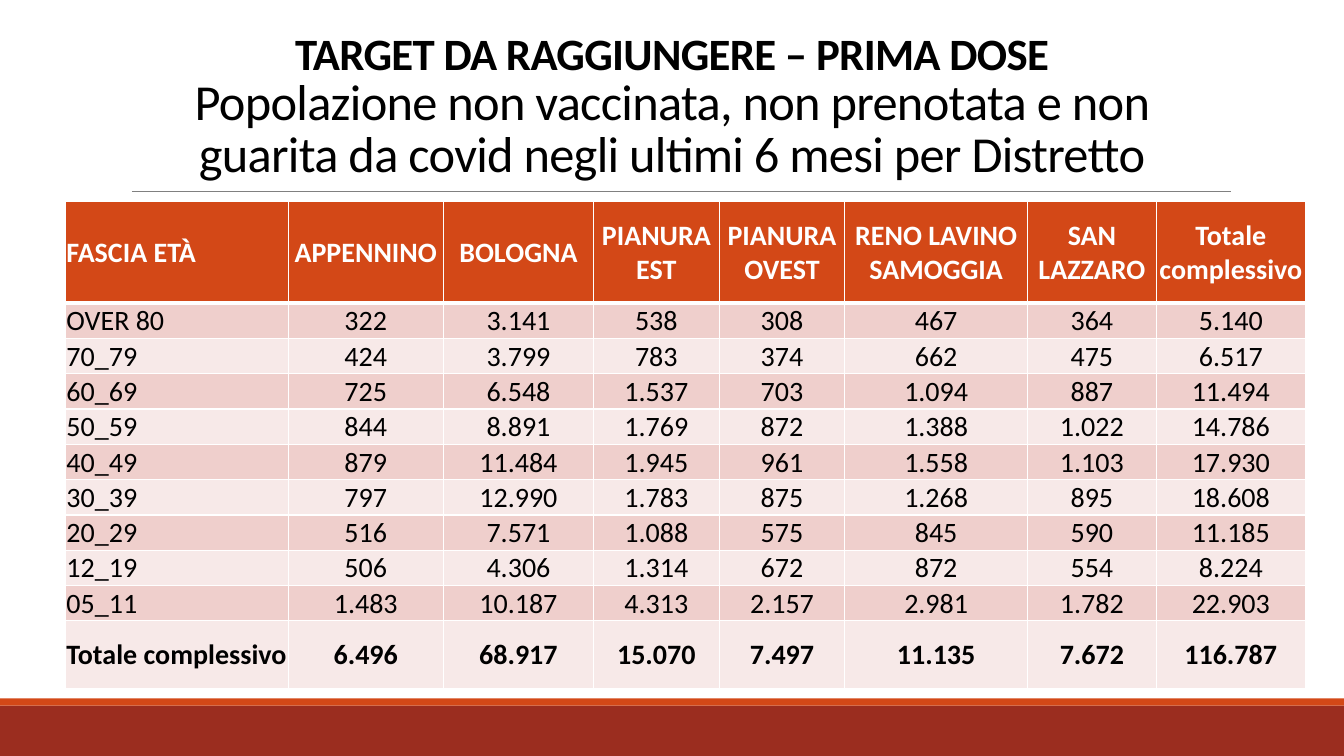
"""Builds the slide on first-dose vaccination targets by district."""
from dataclasses import dataclass

import lxml.etree
import pptx
import pptx.dml.color
import pptx.enum.shapes
import pptx.enum.text
import pptx.oxml.ns
import pptx.slide
import pptx.table
import pptx.text.text
import pptx.util

Pt = pptx.util.Pt
ALIGN = pptx.enum.text.PP_ALIGN
ANCHOR = pptx.enum.text.MSO_ANCHOR


@dataclass(frozen=True)
class Theme:
    font: str = "Calibri"
    heading_size: float = 32
    subtitle_size: float = 36
    cell_size: float = 20
    ink: str = "000000"
    white: str = "FFFFFF"
    accent: str = "D34817"
    footer: str = "9B2D1F"
    rule: str = "808080"
    bands: tuple[str, str] = ("EFCFCC", "F7E9E8")


@dataclass(frozen=True)
class Bar:
    top: float
    height: float
    color: str


@dataclass(frozen=True)
class Row:
    texts: tuple[str, ...]
    height: float
    fill: str
    color: str
    bold: bool
    label_anchor: ANCHOR
    top_border: float = 1
    bottom_border: float = 1


THEME = Theme()
WIDTH, HEIGHT = 960, 540
BARS = (Bar(504, 36, THEME.footer), Bar(498.8, 5.2, THEME.accent))
COLUMNS = (159, 111, 107.2, 89.8, 89.8, 130.5, 92, 106.5)
HEADER = ("FASCIA ETÀ", "APPENNINO", "BOLOGNA", "PIANURA EST", "PIANURA OVEST",
          "RENO LAVINO SAMOGGIA", "SAN LAZZARO", "Totale complessivo")
AGES = (
    ("OVER 80", "322", "3.141", "538", "308", "467", "364", "5.140"),
    ("70_79", "424", "3.799", "783", "374", "662", "475", "6.517"),
    ("60_69", "725", "6.548", "1.537", "703", "1.094", "887", "11.494"),
    ("50_59", "844", "8.891", "1.769", "872", "1.388", "1.022", "14.786"),
    ("40_49", "879", "11.484", "1.945", "961", "1.558", "1.103", "17.930"),
    ("30_39", "797", "12.990", "1.783", "875", "1.268", "895", "18.608"),
    ("20_29", "516", "7.571", "1.088", "575", "845", "590", "11.185"),
    ("12_19", "506", "4.306", "1.314", "672", "872", "554", "8.224"),
    ("05_11", "1.483", "10.187", "4.313", "2.157", "2.981", "1.782", "22.903"),
)
TOTALS = ("Totale complessivo", "6.496", "68.917", "15.070", "7.497",
          "11.135", "7.672", "116.787")


def rgb(color: str) -> pptx.dml.color.RGBColor:
    return pptx.dml.color.RGBColor.from_string(color)


def add_run(p: pptx.text.text._Paragraph, text: str, size: float,
            color: str, bold: bool) -> pptx.text.text._Run:
    r = p.add_run()
    r.text = text
    r.font.name = THEME.font
    r.font.size = Pt(size)
    r.font.bold = bold
    r.font.color.rgb = rgb(color)
    return r


def add_bar(s: pptx.slide.Slide, bar: Bar) -> None:
    sp = s.shapes.add_shape(pptx.enum.shapes.MSO_SHAPE.RECTANGLE,
                            0, Pt(bar.top), Pt(WIDTH), Pt(bar.height))
    sp.shadow.inherit = False
    sp.fill.solid()
    sp.fill.fore_color.rgb = rgb(bar.color)
    sp.line.fill.background()


def add_rule(s: pptx.slide.Slide) -> None:
    sp = s.shapes.add_connector(pptx.enum.shapes.MSO_CONNECTOR.STRAIGHT,
                                Pt(94.3), Pt(136.8), Pt(879), Pt(136.8))
    sp.line.color.rgb = rgb(THEME.rule)
    sp.line.width = Pt(0.5)
    lxml.etree.SubElement(sp._element.spPr, pptx.oxml.ns.qn("a:effectLst"))


def add_title(s: pptx.slide.Slide) -> None:
    sp = s.shapes.add_textbox(Pt(84), Pt(19.4), Pt(792), Pt(114.5))
    tf = sp.text_frame
    tf.word_wrap = True
    tf.vertical_anchor = ANCHOR.BOTTOM
    p = tf.paragraphs[0]
    p.alignment = ALIGN.CENTER
    p.line_spacing = 0.85
    heading = add_run(p, "TARGET DA RAGGIUNGERE – PRIMA DOSE",
                      THEME.heading_size, THEME.ink, True)
    p.add_line_break()
    subtitle = add_run(p, "Popolazione non vaccinata, non prenotata e non guarita "
                       "da covid negli ultimi 6 mesi per Distretto",
                       THEME.subtitle_size, THEME.ink, False)
    for r in (heading, subtitle):
        r._r.get_or_add_rPr().set("spc", "-50")


def set_border(cell: pptx.table._Cell, side: str, width: float) -> None:
    qn = pptx.oxml.ns.qn
    ln = lxml.etree.SubElement(cell._tc.get_or_add_tcPr(), qn(f"a:ln{side}"),
                               w=str(Pt(width)))
    fill = lxml.etree.SubElement(ln, qn("a:solidFill"))
    lxml.etree.SubElement(fill, qn("a:srgbClr"), val=THEME.white)


def fill_cell(cell: pptx.table._Cell, text: str, row: Row, is_label: bool) -> None:
    cell.margin_left = cell.margin_right = cell.margin_top = Pt(0.7)
    cell.margin_bottom = 0
    cell.vertical_anchor = row.label_anchor if is_label else ANCHOR.MIDDLE
    for side, width in (("L", 1), ("R", 1), ("T", row.top_border),
                        ("B", row.bottom_border)):
        set_border(cell, side, width)
    cell.fill.solid()
    cell.fill.fore_color.rgb = rgb(row.fill)
    p = cell.text_frame.paragraphs[0]
    p.alignment = ALIGN.LEFT if is_label else ALIGN.CENTER
    add_run(p, text, THEME.cell_size, row.color, row.bold)


def table_rows() -> list[Row]:
    header = Row(HEADER, 73, THEME.accent, THEME.white, True, ANCHOR.MIDDLE,
                 bottom_border=3)
    ages = [Row(texts, 25.2, THEME.bands[i % 2], THEME.ink, False, ANCHOR.BOTTOM,
                top_border=1 if i else 3) for i, texts in enumerate(AGES)]
    totals = Row(TOTALS, 48.6, THEME.bands[1], THEME.ink, True, ANCHOR.MIDDLE)
    return [header, *ages, totals]


def add_targets(s: pptx.slide.Slide, rows: list[Row]) -> None:
    table = s.shapes.add_table(len(rows), len(COLUMNS), Pt(46.8), Pt(143.6),
                               Pt(sum(COLUMNS)),
                               Pt(sum(row.height for row in rows))).table
    for column, width in zip(table.columns, COLUMNS):
        column.width = Pt(width)
    for i, row in enumerate(rows):
        table.rows[i].height = Pt(row.height)
        for j, text in enumerate(row.texts):
            fill_cell(table.cell(i, j), text, row, j == 0)


def main() -> None:
    prs = pptx.Presentation()
    prs.slide_width, prs.slide_height = Pt(WIDTH), Pt(HEIGHT)
    s = prs.slides.add_slide(prs.slide_layouts[6])
    for bar in BARS:
        add_bar(s, bar)
    add_rule(s)
    add_title(s)
    add_targets(s, table_rows())
    prs.save("out.pptx")


if __name__ == "__main__":
    main()
